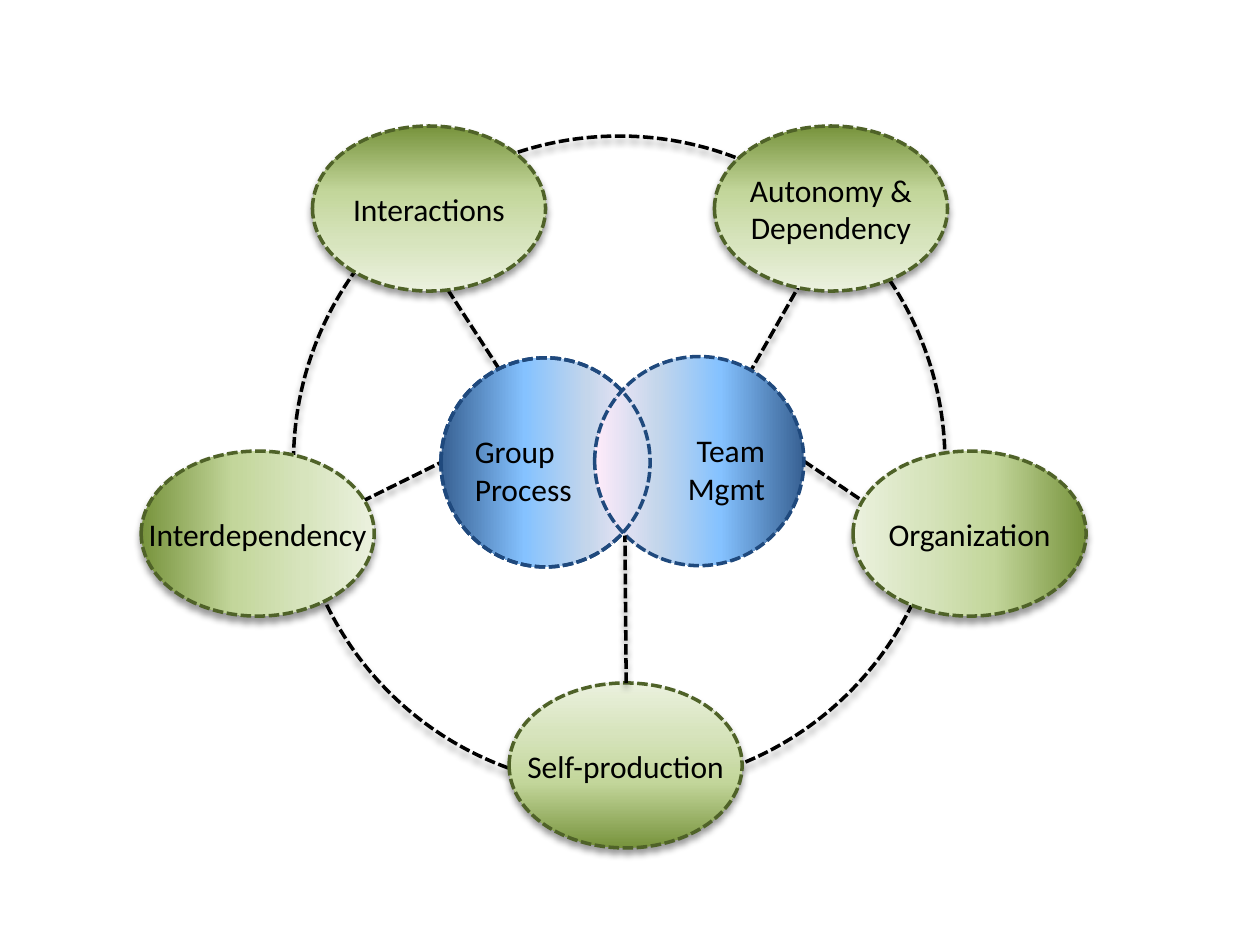
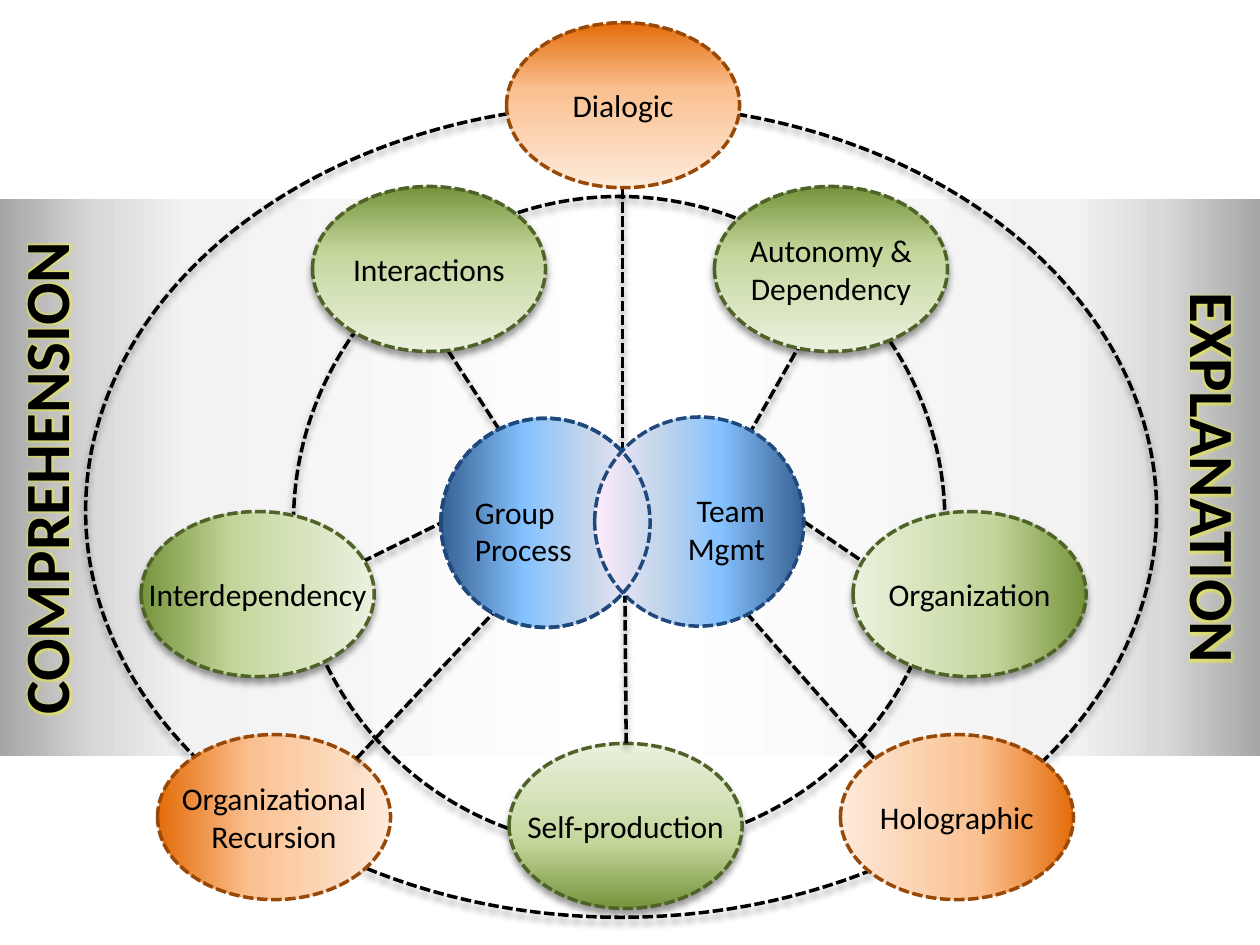
from lxml import etree
from pptx import Presentation
from pptx import util as u
from pptx.dml.color import RGBColor
from pptx.enum import dml, shapes, text
from pptx.oxml import ns

BLACK = "000000"
POSITIONS = (0, 40, 70, 100)
GREEN = tuple(zip(POSITIONS, ("77933C", "C3D69B", "D7E4BD", "EBF1DE")))
ORANGE = tuple(zip(POSITIONS, ("E46C0A", "FAC090", "FCD5B5", "FDEADA")))
BLUE = tuple(zip(POSITIONS, ("376092", "85C2FF", "C4D6EB", "FFEBFA")))
GREY = tuple(zip((0, 16, 30, 100), ("A6A6A6", "D9D9D9", "F2F2F2", "FFFFFF")))
GREEN_EDGE, ORANGE_EDGE, BLUE_EDGE = "4F6228", "984807", "1F497D"
NODE_W, NODE_H = 1.85, 1.31
CORE = 1.66


def rgb(value):
    return RGBColor.from_string(value)


def add_effect(parent, tag, color, alpha, **attributes):
    effects = parent.find(ns.qn("a:effectLst"))
    if effects is None:
        effects = etree.SubElement(parent, ns.qn("a:effectLst"))
    effect = etree.SubElement(effects, ns.qn(tag), attributes)
    tint = etree.SubElement(effect, ns.qn("a:srgbClr"), val=color)
    etree.SubElement(tint, ns.qn("a:alpha"), val=str(alpha * 1000))


class Diagram:
    """Draws the dashed, gradient-filled elements on the current slide."""

    font = "Calibri"

    def __init__(self, deck):
        self.deck = deck
        self.slide = None

    def new_slide(self):
        self.slide = self.deck.slides.add_slide(self.deck.slide_layouts[6])

    def dash(self, line, color):
        line.color.rgb = rgb(color)
        line.width = u.Pt(2)
        line.dash_style = dml.MSO_LINE.SQUARE_DOT

    def cast_shadow(self, properties):
        add_effect(properties, "a:outerShdw", BLACK, 40, blurRad=str(u.Pt(4)),
                   dist=str(u.Pt(3)), dir="5400000", rotWithShape="0")

    def shade(self, shape, stops, angle):
        shape.fill.gradient()
        shape.fill.gradient_angle = -angle % 360
        listing = next(shape._element.spPr.iter(ns.qn("a:gsLst")))
        for stop in list(listing):
            listing.remove(stop)
        for position, color in stops:
            stop = etree.SubElement(listing, ns.qn("a:gs"), pos=str(position * 1000))
            etree.SubElement(stop, ns.qn("a:srgbClr"), val=color)

    def fill_text(self, frame, lines, align, size=18, bold=False):
        frame.word_wrap = False
        for index, words in enumerate(lines):
            paragraph = frame.add_paragraph() if index else frame.paragraphs[0]
            paragraph.alignment = align
            run = paragraph.add_run()
            run.text = words
            run.font.name = self.font
            run.font.size = u.Pt(size)
            run.font.bold = bold
            run.font.color.rgb = rgb(BLACK)

    def ray(self, start, end):
        ray = self.slide.shapes.add_connector(
            shapes.MSO_CONNECTOR.STRAIGHT, *(u.Inches(v) for v in (*start, *end)))
        self.dash(ray.line, BLACK)
        self.cast_shadow(ray._element.spPr)

    def outline(self, kind, x, y, w, h, stops=None, angle=0, edge=None, shadow=False):
        shape = self.slide.shapes.add_shape(kind, *(u.Inches(v) for v in (x, y, w, h)))
        if stops:
            self.shade(shape, stops, angle)
        else:
            shape.fill.background()
        if edge:
            self.dash(shape.line, edge)
        else:
            shape.line.fill.background()
        shape.shadow.inherit = False
        if shadow:
            self.cast_shadow(shape._element.spPr)
        return shape

    def ellipse(self, x, y, w, h, **style):
        return self.outline(shapes.MSO_SHAPE.OVAL, x, y, w, h, **style)

    def band(self, x, angle):
        self.outline(shapes.MSO_SHAPE.RECTANGLE, x, 1.58, 4.92, 4.42,
                     stops=GREY, angle=angle)

    def node(self, x, y, lines, **style):
        node = self.ellipse(x, y, NODE_W, NODE_H, **style)
        node.text_frame.vertical_anchor = text.MSO_ANCHOR.MIDDLE
        self.fill_text(node.text_frame, lines, text.PP_ALIGN.CENTER)

    def label(self, x, y, w, lines, align, **style):
        label = self.slide.shapes.add_textbox(*(u.Inches(v) for v in (x, y, w, 0.71)))
        self.fill_text(label.text_frame, lines, align, **style)
        return label

    def side_title(self, x, w, words, rotation):
        title = self.label(x, 3.44, w, [words], text.PP_ALIGN.CENTER, size=36, bold=True)
        title.rotation = rotation
        properties = title.text_frame.paragraphs[0].runs[0]._r.rPr
        add_effect(properties, "a:glow", "FFFF00", 40, rad=str(u.Pt(5)))
        properties.find(ns.qn("a:solidFill")).addnext(
            properties.find(ns.qn("a:effectLst")))


def draw_team_system(diagram, top):
    for start, end in (((2.67, 3.08), (3.5, 2.67)), ((6.38, 2.66), (7.25, 3.25)),
                       ((6.92, 0.25), (5.5, 2.75)), ((3.25, 0.83), (4.17, 2.25))):
        diagram.ray((start[0], top + start[1]), (end[0], top + end[1]))
    diagram.ellipse(2.33, top + 0.08, 5.17, 5.17, edge=BLACK, shadow=True)

    group, team = (3.5, top + 1.84, CORE, CORE), (4.72, top + 1.83, CORE, CORE)
    diagram.ellipse(*group, stops=BLUE, edge=BLUE_EDGE)
    diagram.ellipse(*team, stops=BLUE, angle=180, edge=BLUE_EDGE)
    diagram.ellipse(*group, edge=BLUE_EDGE)
    diagram.label(3.67, top + 2.38, 1, ["Group", "Process"], text.PP_ALIGN.LEFT)
    diagram.label(5.25, top + 2.37, 0.92, ["Team", "Mgmt"], text.PP_ALIGN.RIGHT)

    for x, y, angle, lines in ((5.67, 0, 90, ["Autonomy &", "Dependency"]),
                               (2.48, 0, 90, ["Interactions"]),
                               (6.77, 2.58, 180, ["Organization"]),
                               (4.04, 4.42, 270, ["Self-production"]),
                               (1.12, 2.58, 0, ["Interdependency"])):
        diagram.node(x, top + y, lines, stops=GREEN, angle=angle,
                     edge=GREEN_EDGE, shadow=True)
    diagram.ray((4.97, top + 4.42), (4.96, top + 3.25))


def draw_principles(diagram):
    diagram.band(5.08, 180)
    diagram.band(0, 0)
    diagram.ray((4.94, 3.7), (4.94, 1.49))
    diagram.ray((6.94, 6.02), (5.92, 4.86))
    diagram.ellipse(0.68, 0.83, 8.5, 6.45, edge=BLACK, shadow=True)
    for x, y, angle, lines in ((1.25, 5.83, 0, ["Organizational", "Recursion"]),
                               (4.02, 0.18, 90, ["Dialogic"]),
                               (6.67, 5.83, 180, ["Holographic"])):
        diagram.node(x, y, lines, stops=ORANGE, angle=angle, edge=ORANGE_EDGE)
    diagram.ray((2.83, 6.02), (3.92, 4.86))


def main():
    deck = Presentation()
    deck.slide_width, deck.slide_height = u.Inches(10), u.Inches(7.5)
    diagram = Diagram(deck)

    diagram.new_slide()
    draw_team_system(diagram, 1)

    diagram.new_slide()
    draw_principles(diagram)
    draw_team_system(diagram, 1.48)
    diagram.side_title(-2.52, 5.75, "COMPREHENSION", 270)
    diagram.side_title(7.6, 4.08, "EXPLANATION", 90)

    deck.save("out.pptx")


if __name__ == "__main__":
    main()
